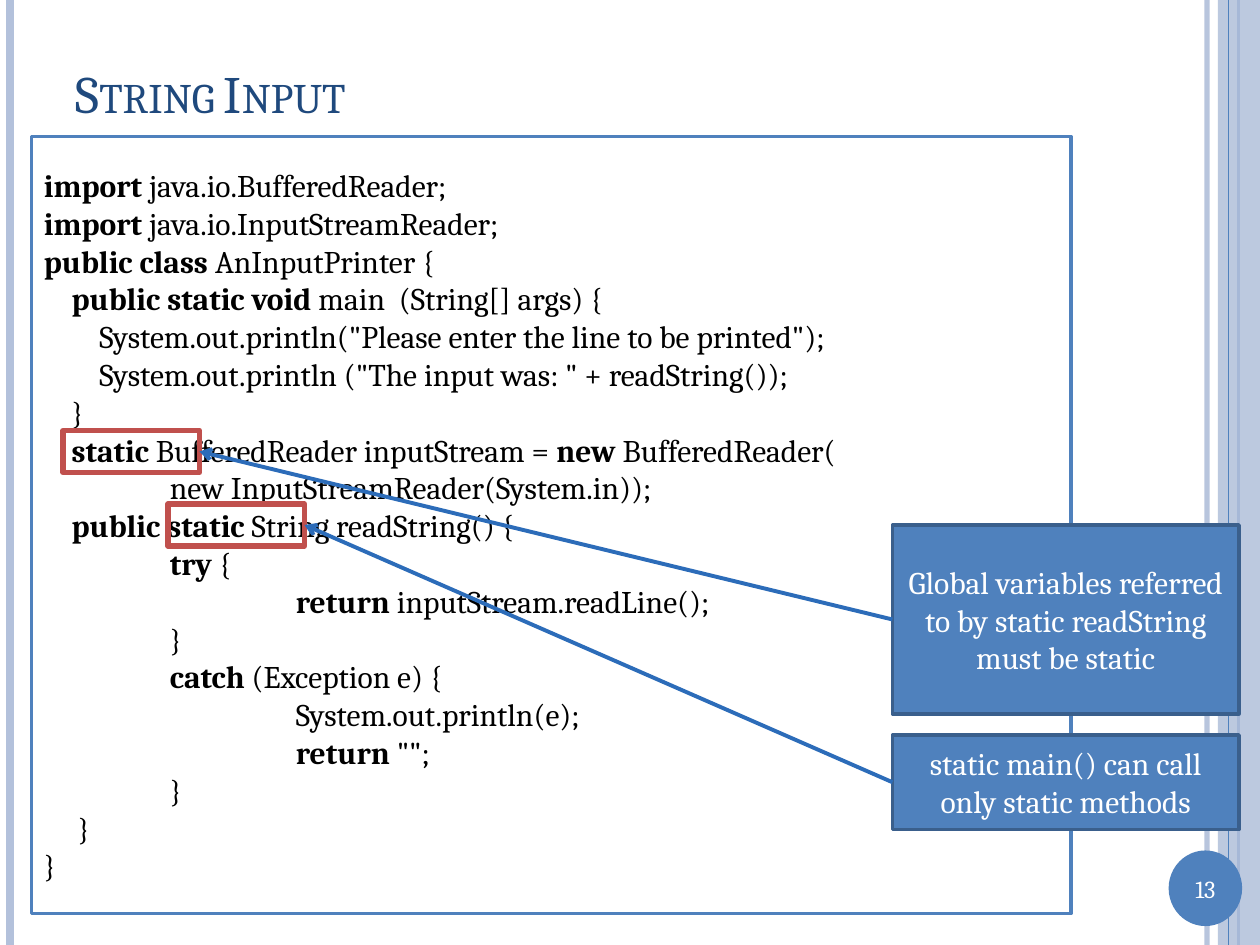
"""Build the String Input slide: annotated Java code with two callouts."""
import pptx
import pptx.dml.color
import pptx.enum.shapes
import pptx.enum.text
import pptx.oxml
import pptx.oxml.ns
import pptx.util
from lxml import etree
from pptx.util import Inches

SHAPES = pptx.enum.shapes.MSO_SHAPE
STRAIGHT = pptx.enum.shapes.MSO_CONNECTOR.STRAIGHT
ALIGN = pptx.enum.text.PP_ALIGN
MIDDLE = pptx.enum.text.MSO_ANCHOR.MIDDLE
GRID = Inches(1) / 12


def color(hex_string):
    return pptx.dml.color.RGBColor.from_string(hex_string)


def add_text(paragraph, marked, size, hex_string, align):
    paragraph.alignment = align
    for number, part in enumerate(marked.split("*")):
        if part:
            run = paragraph.add_run()
            run.text = part
            values = {"name": "Cambria", "size": pptx.util.Pt(size), "bold": number % 2 == 1}
            for name, value in values.items():
                setattr(run.font, name, value)
            run.font.color.rgb = color(hex_string)


presentation = pptx.Presentation()
presentation.slide_width = Inches(10)
presentation.slide_height = Inches(7.5)
slide = presentation.slides.add_slide(presentation.slide_layouts[5])

title = slide.shapes.title
title_format = {"left": 0.5, "top": 0.3, "width": 8.67, "height": 0.87}
for name, value in title_format.items():
    setattr(title, name, Inches(value))
title.text_frame.vertical_anchor = MIDDLE
title_paragraph = title.text_frame.paragraphs[0]
add_text(title_paragraph, "String Input", 30, "1F497D", ALIGN.LEFT)
title_paragraph.runs[0].font._element.set("cap", "small")

connectors = []
for x, hex_string, width in [
    (9.58, "B3C1DB", 3),
    (0.08, "B3C1DB", 4.5),
    (9.83, "4F81BD", 1.5),
    (9.75, "4F81BD", 0.75),
]:
    rule = slide.shapes.add_connector(STRAIGHT, Inches(x), 0, Inches(x), Inches(7.5))
    connectors.append((rule, hex_string, width))

boxes = {}
for name, kind, bounds, fill, line, width in [
    ("band", SHAPES.RECTANGLE, (116, 0, 4, 90), "B3C1DB", None, 0),
    ("badge", SHAPES.OVAL, (111.3, 81, 7, 7.2), "4F81BD", None, 0),
    ("code", SHAPES.RECTANGLE, (3, 13, 99, 74), "FFFFFF", "4F81BD", 2),
    ("variables", SHAPES.RECTANGLE, (85, 50, 33, 18), "4F81BD", "3A5F8C", 2),
    ("methods", SHAPES.RECTANGLE, (85, 70, 33, 9), "4F81BD", "3A5F8C", 2),
    ("static field", SHAPES.RECTANGLE, (6, 41, 13, 4), None, "C0504D", 3),
    ("static method", SHAPES.RECTANGLE, (16, 48, 13, 4), None, "C0504D", 3),
]:
    shape = slide.shapes.add_shape(kind, *[round(units * GRID) for units in bounds])
    shape.shadow.inherit = False
    if fill:
        shape.fill.solid()
        shape.fill.fore_color.rgb = color(fill)
    else:
        shape.fill.background()
    if line:
        shape.line.color.rgb = color(line)
        shape.line.width = pptx.util.Pt(width)
    else:
        shape.line.fill.background()
    shape.text_frame.word_wrap = True
    shape.text_frame.vertical_anchor = MIDDLE
    boxes[name] = shape

thin_rule = connectors[-1][0]
boxes["band"]._element.addnext(thin_rule._element)

code_lines = [
    (0, "*import *java.io.BufferedReader;"),
    (0, "*import *java.io.InputStreamReader;"),
    (0, "*public class *AnInputPrinter {"),
    (0.22, "*public static void* main  (String[] args) {"),
    (0.44, 'System.out.println("Please enter the line to be printed");'),
    (0.44, 'System.out.println ("The input was: " + readString());'),
    (0.22, "}"),
    (0.22, "*static *BufferedReader inputStream = *new *BufferedReader("),
    (1, "new InputStreamReader(System.in));"),
    (0.22, "*public static* String readString() {"),
    (1, "*try* {"),
    (2, "*return *inputStream.readLine();"),
    (1, "}"),
    (1, "*catch* (Exception e) {"),
    (2, "System.out.println(e);"),
    (2, '*return* "";'),
    (1, "}"),
    (0.27, "}"),
    (0, "}"),
]
code_frame = boxes["code"].text_frame
for number, (indent, text) in enumerate(code_lines):
    paragraph = code_frame.add_paragraph() if number else code_frame.paragraphs[0]
    add_text(paragraph, text, 18, "000000", ALIGN.LEFT)
    paragraph._p.get_or_add_pPr().set("marL", str(Inches(indent)))

for name, text, size in [
    ("badge", "13", 14),
    ("variables", "Global variables referred to by static readString must be static", 18),
    ("methods", "static main() can call only static methods", 18),
]:
    add_text(boxes[name].text_frame.paragraphs[0], text, size, "FFFFFF", ALIGN.CENTER)
for side in ("margin_left", "margin_right"):
    setattr(boxes["badge"].text_frame, side, 0)

for source, target in [("variables", "static field"), ("methods", "static method")]:
    arrow = slide.shapes.add_connector(STRAIGHT, 0, 0, 0, 0)
    arrow.begin_connect(boxes[source], 1)
    arrow.end_connect(boxes[target], 3)
    connectors.append((arrow, "2C6CB9", 2.25))

for connector, hex_string, width in connectors:
    connector.line.color.rgb = color(hex_string)
    connector.line.width = pptx.util.Pt(width)
    etree.SubElement(connector._element.spPr, pptx.oxml.ns.qn("a:effectLst"))

for arrow, hex_string, width in connectors[-2:]:
    tail = etree.SubElement(arrow.line._get_or_add_ln(), pptx.oxml.ns.qn("a:tailEnd"))
    tail.set("type", "arrow")

for element, opacity in [(boxes["band"]._element, 87), (connectors[0][0]._element, 93)]:
    shade = element.spPr.find(".//" + pptx.oxml.ns.qn("a:srgbClr"))
    etree.SubElement(shade, pptx.oxml.ns.qn("a:alpha")).set("val", str(opacity * 1000))

presentation.save("out.pptx")
